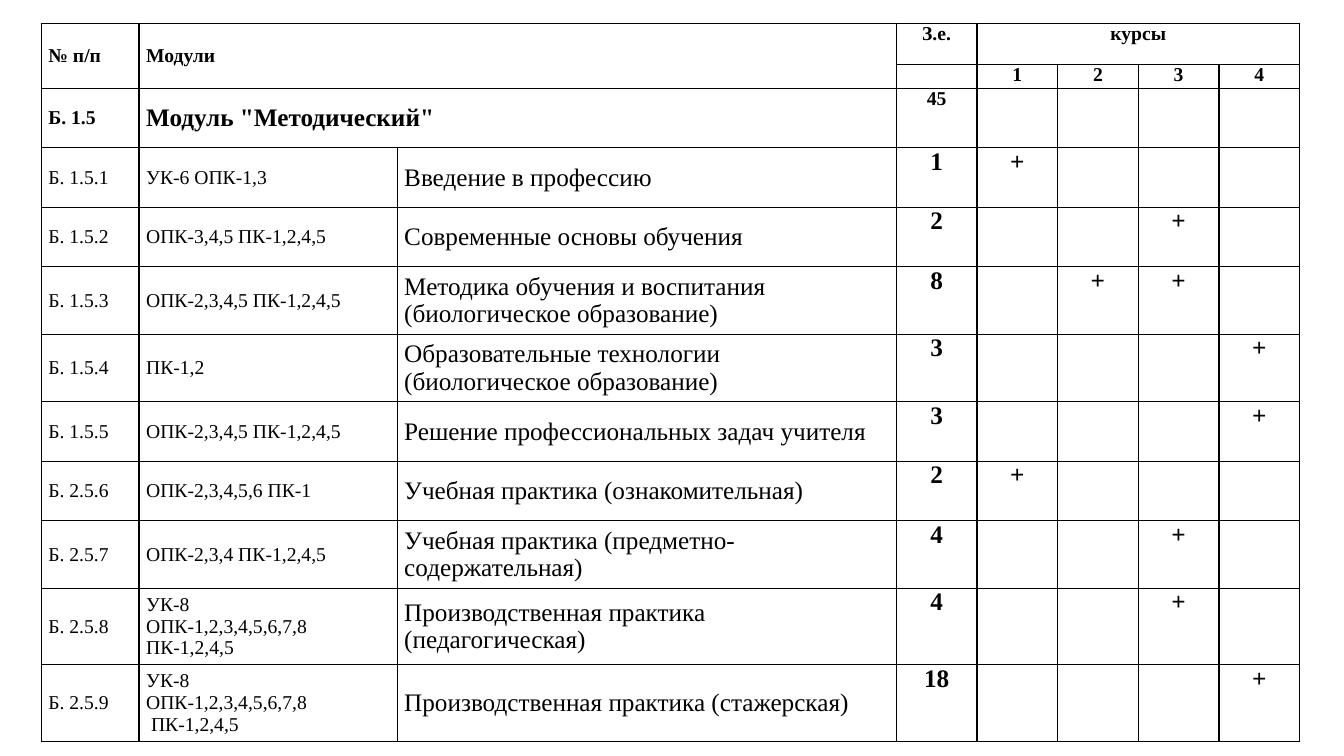
import pptx
import pptx.dml.color
import pptx.enum.text
import pptx.oxml.ns
import pptx.util
from lxml import etree

Inches, Pt = pptx.util.Inches, pptx.util.Pt
FONT, BLACK = "Times New Roman", "000000"
SMALL, LARGE = 14, 18
LEFT, TOP = 0.41, 0.23
COL_WIDTHS = [0.97, 2.56, 4.95] + [0.8] * 5
ROW_HEIGHTS = [0.41, 0.22] + [0.59] * 3 + [0.67] * 2 + [0.59] * 2 + [0.67] + [0.76] * 2
CREDITS_COL = 3

HEADER = [
    ["№ п/п", "Модули", "", "З.е.", "курсы", "", "", ""],
    ["", "", "", "", "1", "2", "3", "4"],
    ["Б. 1.5", "Модуль \"Методический\"", "", "45", "", "", "", ""],
]
# (first row, first column, last row, last column)
MERGES = [(0, 0, 1, 0), (0, 1, 1, 2), (0, 4, 0, 7), (2, 1, 2, 2)]

# number, competences, discipline, credits, years of study
DISCIPLINES = [
    ("Б. 1.5.1", "УК-6 ОПК-1,3", "Введение в профессию", 1, [1]),
    ("Б. 1.5.2", "ОПК-3,4,5 ПК-1,2,4,5", "Современные основы обучения", 2, [3]),
    ("Б. 1.5.3", "ОПК-2,3,4,5 ПК-1,2,4,5",
     "Методика обучения и воспитания (биологическое образование)", 8, [2, 3]),
    ("Б. 1.5.4", "ПК-1,2", "Образовательные технологии (биологическое образование)", 3, [4]),
    ("Б. 1.5.5", "ОПК-2,3,4,5 ПК-1,2,4,5", "Решение профессиональных задач учителя", 3, [4]),
    ("Б. 2.5.6", "ОПК-2,3,4,5,6 ПК-1", "Учебная практика (ознакомительная)", 2, [1]),
    ("Б. 2.5.7", "ОПК-2,3,4 ПК-1,2,4,5", "Учебная практика (предметно-содержательная)", 4, [3]),
    ("Б. 2.5.8", "УК-8\nОПК-1,2,3,4,5,6,7,8\nПК-1,2,4,5",
     "Производственная практика (педагогическая)", 4, [3]),
    ("Б. 2.5.9", "УК-8\nОПК-1,2,3,4,5,6,7,8\n ПК-1,2,4,5",
     "Производственная практика (стажерская)", 18, [4]),
]


def rgb(value):
    return pptx.dml.color.RGBColor.from_string(value)


def add_borders(cell):
    tc_pr = cell._tc.get_or_add_tcPr()
    qn = pptx.oxml.ns.qn
    for side in "LRTB":
        line = etree.SubElement(tc_pr, qn(f"a:ln{side}"), w=str(Pt(1)))
        fill = etree.SubElement(line, qn("a:solidFill"))
        etree.SubElement(fill, qn("a:srgbClr"), val=BLACK)


def fill_cell(cell, text, size, bold, centred):
    add_borders(cell)
    cell.fill.background()
    cell.margin_left = cell.margin_right = Inches(0.07)
    cell.margin_top = cell.margin_bottom = 0
    anchor = pptx.enum.text.MSO_ANCHOR
    cell.vertical_anchor = anchor.TOP if centred else anchor.MIDDLE
    tf = cell.text_frame
    for i, line in enumerate(text.split("\n")):
        p = tf.paragraphs[0] if i == 0 else tf.add_paragraph()
        align = pptx.enum.text.PP_ALIGN
        p.alignment = align.CENTER if centred else align.LEFT
        if not line:
            # an empty cell keeps the small line height
            p._p.get_or_add_endParaRPr().set("sz", str(SMALL * 100))
            continue
        r = p.add_run()
        r.text = line
        r.font.name = FONT
        r.font.size = Pt(size)
        r.font.bold = bold
        r.font.color.rgb = rgb(BLACK)


def text_size(row, col):
    if row < len(HEADER):
        return LARGE if (row, col) == (2, 1) else SMALL
    return LARGE if col >= 2 else SMALL


def main():
    prs = pptx.Presentation()
    prs.slide_width, prs.slide_height = Inches(13.33), Inches(7.5)
    slide = prs.slides.add_slide(prs.slide_layouts[6])

    rows = HEADER + [
        [number, competences, name, str(credit)]
        + ["+" if year in years else "" for year in range(1, 5)]
        for number, competences, name, credit, years in DISCIPLINES
    ]
    table = slide.shapes.add_table(
        len(rows), len(COL_WIDTHS), Inches(LEFT), Inches(TOP),
        Inches(sum(COL_WIDTHS)), Inches(sum(ROW_HEIGHTS))).table
    table.first_row = table.horz_banding = False
    for column, width in zip(table.columns, COL_WIDTHS):
        column.width = Inches(width)
    for row, height in zip(table.rows, ROW_HEIGHTS):
        row.height = Inches(height)

    for i, row in enumerate(rows):
        for j, text in enumerate(row):
            centred = j >= CREDITS_COL
            fill_cell(table.cell(i, j), text, text_size(i, j),
                      bold=i < len(HEADER) or centred, centred=centred)
    for top, left, bottom, right in MERGES:
        table.cell(top, left).merge(table.cell(bottom, right))

    prs.save("out.pptx")


if __name__ == "__main__":
    main()
